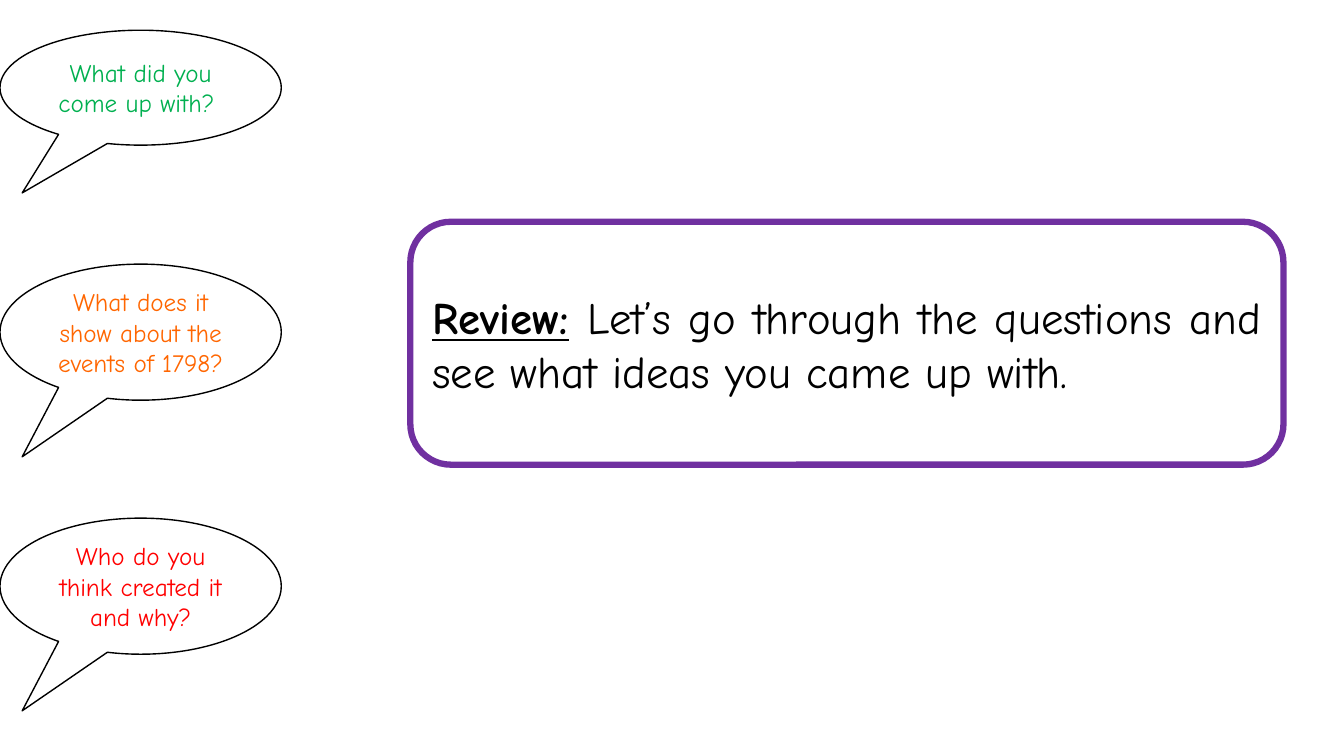
from pptx import Presentation
from pptx.dml.color import RGBColor
from pptx.enum.shapes import MSO_SHAPE as Shape
from pptx.enum.text import MSO_ANCHOR as Anchor, PP_ALIGN as Align
from pptx.util import Inches, Pt

FONT = "Comic Neue"
COLORS = {
    "white": "FFFFFF",
    "black": "000000",
    "green": "00B050",
    "orange": "FF6600",
    "red": "FF0000",
    "purple": "7030A0",
}
BUBBLE_WIDTH = 2.79
# top, height, question, colour
QUESTIONS = [
    (0.3, 1.14, "What did you come up with? ", "green"),
    (2.62, 1.35, "What does it show about the events of 1798?", "orange"),
    (5.14, 1.35, "Who do you think created it and why?", "red"),
]


def rgb(name):
    return RGBColor.from_string(COLORS[name])


def add_text(paragraph, text, size, color="black", bold=None, underline=None):
    run = paragraph.add_run()
    run.text = text
    font = run.font
    font.name, font.size = FONT, Pt(size)
    font.bold, font.underline = bold, underline
    font.color.rgb = rgb(color)


def add_panel(slide, kind, box, line, width, align):
    """Add an outlined white shape; return it with its first paragraph."""
    panel = slide.shapes.add_shape(kind, *map(Inches, box))
    panel.shadow.inherit = False
    panel.fill.solid()
    panel.fill.fore_color.rgb = rgb("white")
    panel.line.color.rgb = rgb(line)
    panel.line.width = Pt(width)
    frame = panel.text_frame
    frame.word_wrap = True
    frame.vertical_anchor = Anchor.MIDDLE
    paragraph = frame.paragraphs[0]
    paragraph.alignment = align
    return panel, paragraph


def add_question(slide, box, question, color):
    bubble, paragraph = add_panel(
        slide, Shape.OVAL_CALLOUT, box, "black", 1, Align.CENTER)
    bubble.adjustments[0] = -0.421
    bubble.adjustments[1] = 0.916
    add_text(paragraph, question, 18, color)


def add_review(slide, box):
    _, paragraph = add_panel(
        slide, Shape.ROUNDED_RECTANGLE, box, "purple", 4.5, Align.JUSTIFY)
    add_text(paragraph, "Review:", 32, bold=True, underline=True)
    add_text(paragraph, " ", 32, bold=True)
    add_text(paragraph, "Let’s go through the questions and see what ideas "
             "you came up with.", 32)


def main():
    deck = Presentation()
    deck.slide_width, deck.slide_height = Inches(13.33), Inches(7.5)
    slide = deck.slides.add_slide(deck.slide_layouts[6])
    for top, height, question, color in QUESTIONS:
        add_question(slide, (0, top, BUBBLE_WIDTH, height), question, color)
    add_review(slide, (4.07, 2.2, 8.66, 2.41))
    deck.save("out.pptx")


if __name__ == "__main__":
    main()
